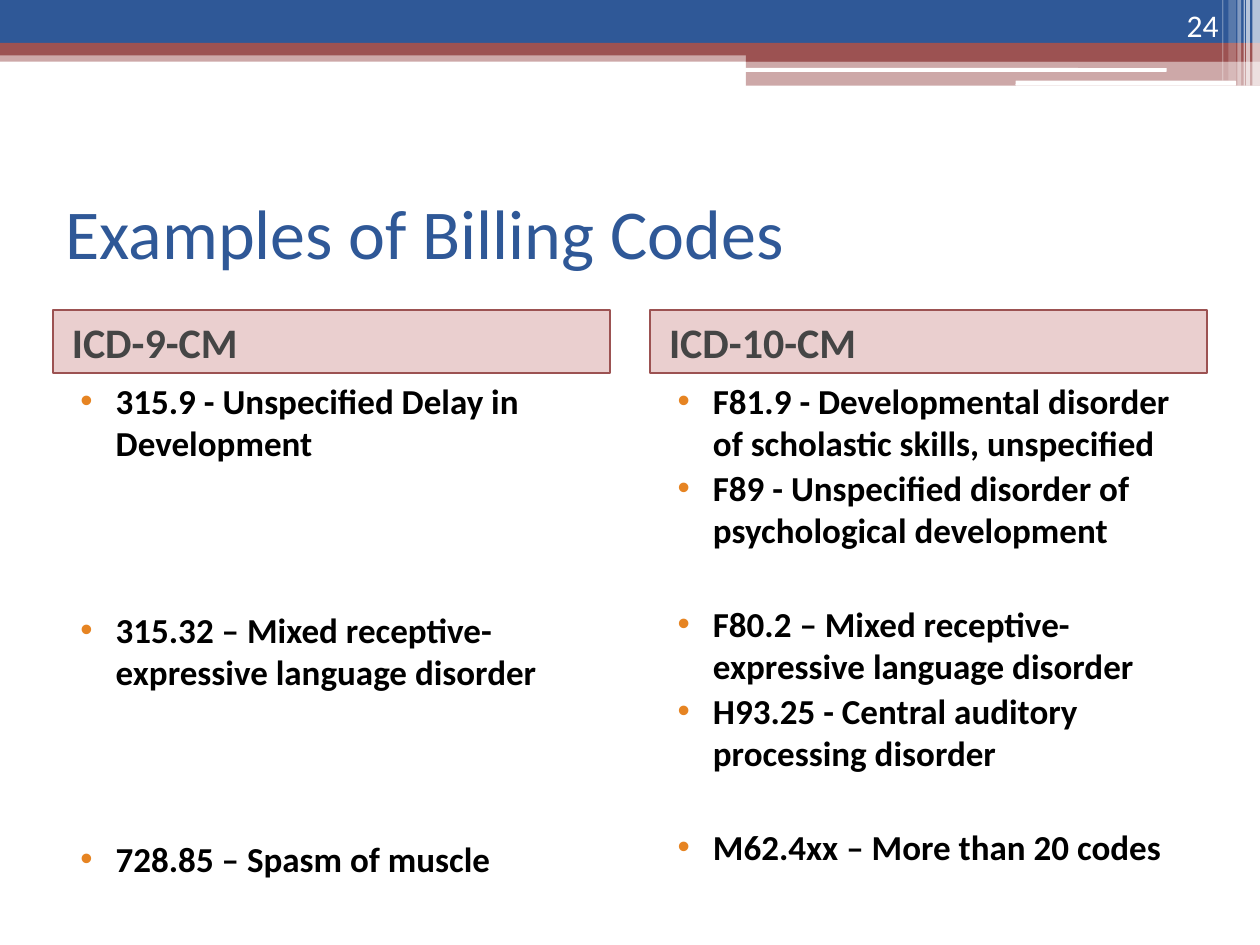
from lxml.etree import SubElement
from pptx import Presentation
from pptx.dml.color import RGBColor
from pptx.enum.shapes import MSO_SHAPE
from pptx.enum.text import MSO_ANCHOR, MSO_AUTO_SIZE, PP_ALIGN
from pptx.oxml.ns import qn
from pptx.util import Inches, Pt

BLUE = RGBColor(0x2F, 0x58, 0x97)
RED = RGBColor(0x9C, 0x52, 0x52)
ROSE = RGBColor(0xAE, 0x40, 0x40)
ORANGE = RGBColor(0xE6, 0x84, 0x22)
GRAY = RGBColor(0x45, 0x45, 0x45)
BLACK = RGBColor(0, 0, 0)
WHITE = RGBColor(0xFF, 0xFF, 0xFF)

presentation = Presentation()
presentation.slide_width = Inches(10)
presentation.slide_height = Inches(7.5)
slide = presentation.slides.add_slide(presentation.slide_layouts[5])


def share(left, top, width, height):
    horizontal = presentation.slide_width / 100
    vertical = presentation.slide_height / 100
    return (int(left * horizontal), int(top * vertical),
            int(width * horizontal), int(height * vertical))


def add_block(kind, box, color, opacity):
    shape = slide.shapes.add_shape(kind, *share(*box))
    shape.shadow.inherit = False
    shape.fill.solid()
    shape.fill.fore_color.rgb = color
    shape.line.fill.background()
    if opacity < 100:
        color_element = shape.fill._xPr.find(qn("a:solidFill"))[0]
        SubElement(color_element, qn("a:alpha"), val=str(opacity * 1000))
    return shape


bands = [
    (MSO_SHAPE.RECTANGLE, (0, 5.33, 100, 1.2), RED, 50),
    (MSO_SHAPE.RECTANGLE, (0, 0, 100, 4.53), BLUE, 100),
    (MSO_SHAPE.RECTANGLE, (0, 4.53, 100, 1.33), RED, 100),
    (MSO_SHAPE.RECTANGLE, (59.2, 5.2, 40.8, 1.33), RED, 100),
    (MSO_SHAPE.RECTANGLE, (59.2, 6.4, 40.8, 2.67), RED, 50),
    (MSO_SHAPE.ROUNDED_RECTANGLE, (59.1, 7.2, 33.5, 0.4), WHITE, 100),
    (MSO_SHAPE.ROUNDED_RECTANGLE, (80.6, 8.53, 17.5, 0.53), WHITE, 100),
]
for band in bands:
    add_block(*band)

stripes = [
    (99.4, 0.6, 9.07, 65),
    (98.9, 0.3, 9.07, 65),
    (98.7, 0.1, 9.07, 60),
    (98.2, 0.3, 9.07, 40),
    (97.5, 0.6, 8.53, 20),
    (97, 0.1, 8.53, 30),
]
for left, width, height, opacity in stripes:
    add_block(MSO_SHAPE.RECTANGLE, (left, 0, width, height), WHITE, opacity)

title = slide.shapes.title
title.left, title.top, title.width, title.height = share(4.2, 16.67, 91.7, 15.6)
title.text_frame.text = "Examples of Billing Codes"
title.text_frame.auto_size = MSO_AUTO_SIZE.NONE
title.text_frame.vertical_anchor = MSO_ANCHOR.MIDDLE
title.text_frame.paragraphs[0].alignment = PP_ALIGN.LEFT
title_font = title.text_frame.paragraphs[0].runs[0].font
title_font.name, title_font.size, title_font.color.rgb = "Calibri", Pt(40), BLUE

NEAR = 2
columns = [
    (4.2, "ICD-9-CM", [
        ("315.9 - Unspecified Delay in Development", NEAR),
        ("315.32 – Mixed receptive-expressive language disorder", 83),
        ("728.85 – Spasm of muscle", 83),
    ]),
    (51.6, "ICD-10-CM", [
        ("F81.9 - Developmental disorder of scholastic skills, unspecified", NEAR),
        ("F89 - Unspecified disorder of psychological development", NEAR),
        ("F80.2 – Mixed receptive-expressive language disorder", 29.5),
        ("H93.25 - Central auditory processing disorder", NEAR),
        ("M62.4xx – More than 20 codes", 29.5),
    ]),
]
for left, heading, codes in columns:
    header = add_block(MSO_SHAPE.RECTANGLE, (left, 32.8, 44.2, 6.67), ROSE, 25)
    header.line.color.rgb = RED
    header.line.width = Pt(1)
    header.text_frame.text = heading
    header.text_frame.margin_left = Inches(0.15)
    header.text_frame.vertical_anchor = MSO_ANCHOR.MIDDLE
    paragraph = header.text_frame.paragraphs[0]
    paragraph.alignment = PP_ALIGN.LEFT
    paragraph.space_before = Pt(3)
    font = paragraph.runs[0].font
    font.name, font.size, font.bold, font.color.rgb = "Calibri", Pt(24), True, GRAY

    code_list = slide.shapes.add_textbox(*share(left, 39.47, 44.2, 56.67))
    code_list.text_frame.word_wrap = True
    code_list.text_frame.text = "\n".join(code for code, gap in codes)
    for paragraph, (code, gap) in zip(code_list.text_frame.paragraphs, codes):
        paragraph.space_before = Pt(gap)
        font = paragraph.runs[0].font
        font.name, font.size, font.bold, font.color.rgb = "Calibri", Pt(20), True, BLACK
        properties = paragraph._p.get_or_add_pPr()
        properties.set("marL", str(Inches(0.4)))
        properties.set("indent", str(Inches(-0.28)))
        bullet_color = SubElement(properties, qn("a:buClr"))
        SubElement(bullet_color, qn("a:srgbClr"), val=str(ORANGE))
        SubElement(properties, qn("a:buFont"), typeface="Arial")
        SubElement(properties, qn("a:buChar"), char="•")

page_number = slide.shapes.add_textbox(*share(89.4, 0, 8.3, 5.33))
page_number.text_frame.word_wrap = True
page_number.text_frame.vertical_anchor = MSO_ANCHOR.BOTTOM
page_number.text_frame.text = "24"
paragraph = page_number.text_frame.paragraphs[0]
paragraph.alignment = PP_ALIGN.RIGHT
font = paragraph.runs[0].font
font.name, font.size, font.color.rgb = "Calibri", Pt(18), WHITE

presentation.save("out.pptx")
